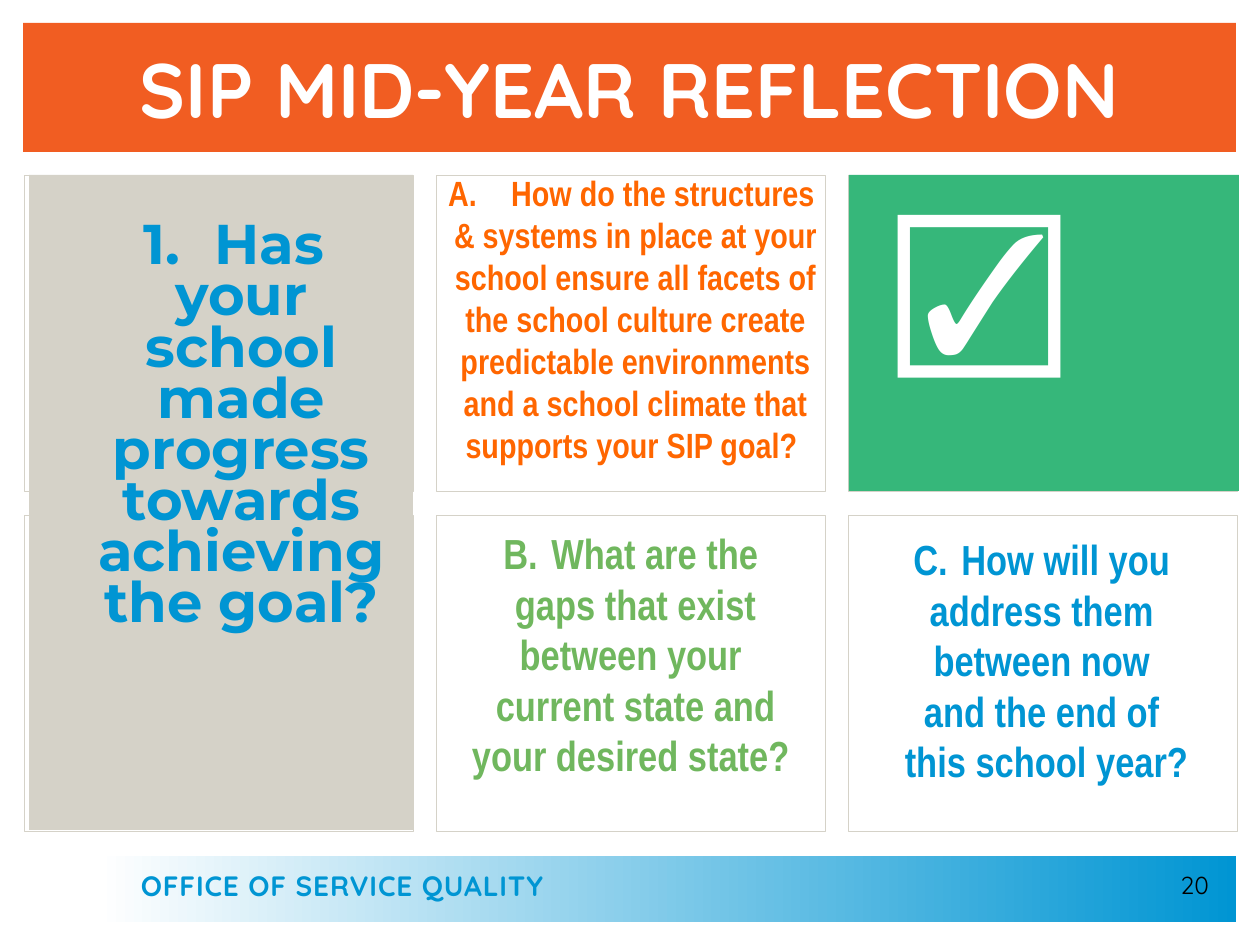
from lxml.etree import SubElement
from pptx import Presentation
from pptx.dml.color import RGBColor
from pptx.enum.shapes import MSO_SHAPE
from pptx.enum.text import MSO_ANCHOR, PP_ALIGN
from pptx.oxml.ns import qn
from pptx.util import Emu, Pt

SCALE = 914400 / 126
WHITE = RGBColor(0xFF, 0xFF, 0xFF)
BLACK = RGBColor(0x00, 0x00, 0x00)
BLUE = RGBColor(0x00, 0x95, 0xD3)
BANNER_ORANGE = RGBColor(0xF1, 0x5D, 0x22)
TEXT_ORANGE = RGBColor(0xFF, 0x66, 0x00)
SAND = RGBColor(0xD5, 0xD2, 0xC8)
GREEN = RGBColor(0x36, 0xB7, 0x7A)
TEXT_GREEN = RGBColor(0x70, 0xB7, 0x5E)


def add_box(place, fill=None, outline=None):
    box = page.shapes.add_shape(MSO_SHAPE.RECTANGLE, *[Emu(round(n * SCALE)) for n in place])
    box.shadow.inherit = False
    if fill is None:
        box.fill.background()
    else:
        box.fill.solid()
        box.fill.fore_color.rgb = fill
    if outline is None:
        box.line.fill.background()
    else:
        box.line.color.rgb = outline
        box.line.width = Pt(0.25)
    return box


def write(box, lines, font, color, align=PP_ALIGN.CENTER, insets=(13, 6, 13, 6),
          anchor=MSO_ANCHOR.TOP, number=None, spacing=None):
    frame = box.text_frame
    left, top, right, bottom = [Emu(round(n * SCALE)) for n in insets]
    frame_format = {"word_wrap": True, "vertical_anchor": anchor, "margin_left": left,
                    "margin_top": top, "margin_right": right, "margin_bottom": bottom}
    for name, value in frame_format.items():
        setattr(frame, name, value)
    for index, line in enumerate(lines):
        para = frame.add_paragraph() if index else frame.paragraphs[0]
        if number and index == 0:
            style, start, indent = number
            properties = para._p.get_or_add_pPr()
            properties.set("marL", str(round(indent * SCALE)))
            properties.set("indent", str(-round(indent * SCALE)))
            bullet = SubElement(properties, qn("a:buAutoNum"), type=style)
            if start > 1:
                bullet.set("startAt", str(start))
        para.alignment = align
        if spacing:
            para.line_spacing = spacing
            para.space_before = Pt(8 if index else 0)
        span = para.add_run()
        span.text = line
        for name, value in font.items():
            setattr(span.font, name, value)
        span.font.color.rgb = color


deck = Presentation()
deck.slide_width = Emu(round(1260 * SCALE))
deck.slide_height = Emu(round(945 * SCALE))
page = deck.slides.add_slide(deck.slide_layouts[6])

footer_band = add_box((98, 856, 1138, 66), WHITE)
footer_band.fill.gradient()
footer_band.fill.gradient_angle = 0
for stop, position, color in zip(footer_band.fill.gradient_stops, (0, 1), (WHITE, BLUE)):
    stop.position = position
    stop.color.rgb = color
add_box((23, 23, 1213, 129), BANNER_ORANGE)

for row in range(2):
    for column in range(3):
        add_box((24 + 412 * column, 175 + 340 * row, 389, 316), outline=SAND)

question_panel = add_box((29, 175, 384, 655), SAND)
write(question_panel,
      ["Has", " your", " school", " made", " progress", " towards", " achieving", " the goal?"],
      {"name": "Montserrat", "size": Pt(32), "bold": True}, BLUE,
      insets=(38, 64, 13, 6), number=("arabicPeriod", 1, 71), spacing=Pt(21.2))

check_panel = add_box((849, 175, 390, 316), GREEN)
write(check_panel, ["☑"], {"name": "Arial", "size": Pt(96)}, WHITE,
      insets=(25, 166, 153, 6), spacing=Pt(21.2))

title = add_box((127, 35, 1076, 106))
write(title, ["SIP MID-YEAR REFLECTION"],
      {"name": "Quicksand", "size": Pt(44), "bold": True}, WHITE, PP_ALIGN.LEFT)

prompts = [
    ((428, 165, 415, 310), 20, TEXT_ORANGE, 63,
     ["How do the structures ",
      "& systems in place at your school ensure all facets of the school culture create "
      "predictable environments and a school climate that supports your SIP goal? "]),
    ((449, 522, 373, 267), 24, TEXT_GREEN, 48,
     ["What are the ", "gaps that exist between your ",
      "current state and your desired state? "]),
    ((859, 528, 375, 267), 24, BLUE, 48,
     ["How will you ", "address them ", "between now ", "and the end of ",
      "this school year?"]),
]
for start, (place, size, color, indent, lines) in enumerate(prompts, 1):
    write(add_box(place), lines, {"name": "Arial Narrow", "size": Pt(size), "bold": True},
          color, number=("alphaUcPeriod", start, indent))

footer = add_box((141, 865, 578, 40))
write(footer, ["OFFICE OF SERVICE QUALITY"],
      {"name": "Quicksand", "size": Pt(16), "bold": True}, BLUE, PP_ALIGN.LEFT,
      insets=(0, 0, 0, 0), anchor=MSO_ANCHOR.MIDDLE)
footer.text_frame.paragraphs[0].runs[0].font._element.set("spc", "50")

page_number = add_box((929, 864, 293, 50))
write(page_number, ["20"], {"name": "Quicksand", "size": Pt(14)}, BLACK, PP_ALIGN.RIGHT)

deck.save("out.pptx")
